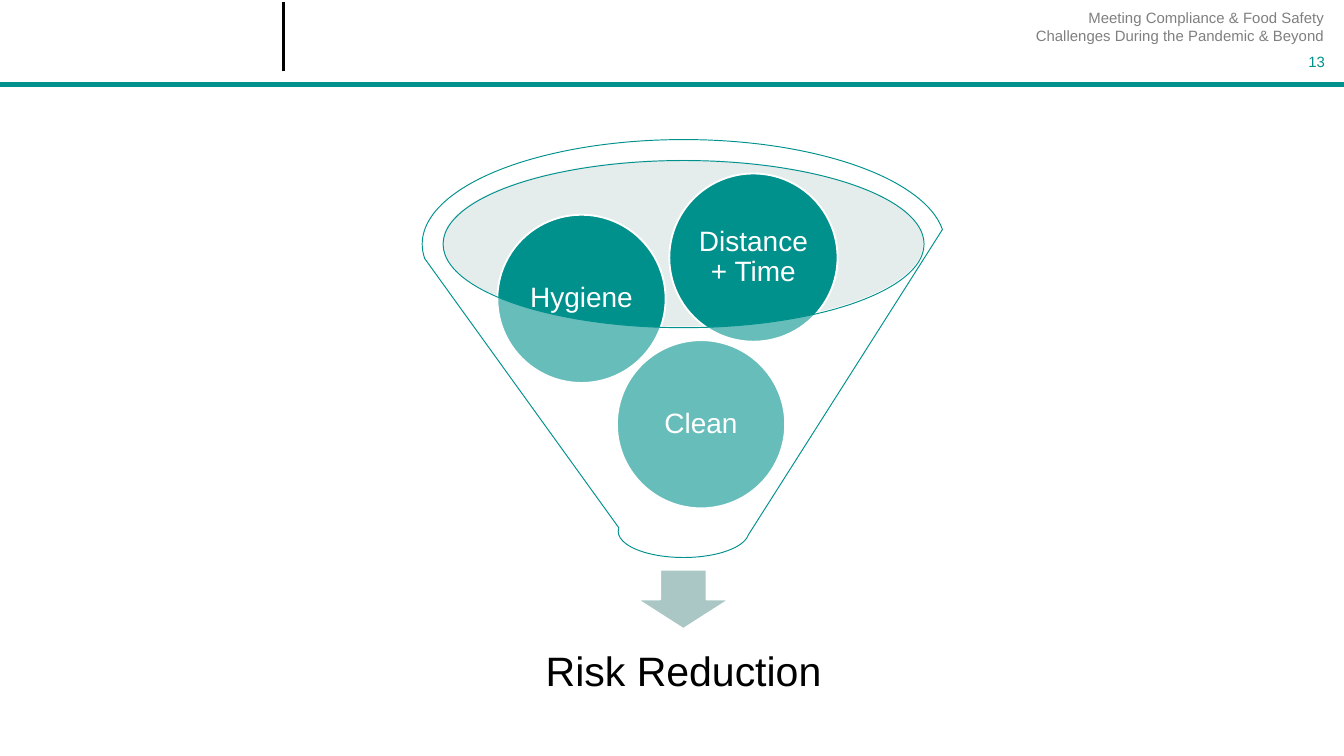
"""Build the risk reduction funnel slide."""
from lxml.etree import SubElement
from pptx import Presentation
from pptx.dml.color import RGBColor
from pptx.enum.shapes import MSO_CONNECTOR, MSO_SHAPE
from pptx.enum.text import MSO_ANCHOR, PP_ALIGN
from pptx.oxml.ns import qn
from pptx.util import Cm, Pt

COLORS = {
    "teal": "00918D",
    "mist": "BDD2D0",
    "arrow": "ABC7C5",
    "gray": "7F7F7F",
    "white": "FFFFFF",
    "black": "000000",
}


def add_text(sp, text, size, color, align=PP_ALIGN.CENTER, inset=0.05, spacing=0.9):
    tf = sp.text_frame
    tf.word_wrap = True
    tf.vertical_anchor = MSO_ANCHOR.MIDDLE
    tf.margin_left = tf.margin_right = Cm(inset)
    tf.margin_top = tf.margin_bottom = Cm(min(inset, 0.13))
    p = tf.paragraphs[0]
    p.alignment = align
    p.line_spacing = spacing
    r = p.add_run()
    r.text = text
    r.font.name = "Arial"
    r.font.size = Pt(size)
    r.font.color.rgb = RGBColor.from_string(COLORS[color])


def add_shape(kind, box, fill, line=None, width=1, alpha=None):
    sp = s.shapes.add_shape(kind, *map(Cm, box))
    sp.shadow.inherit = False
    sp.fill.solid()
    sp.fill.fore_color.rgb = RGBColor.from_string(COLORS[fill])
    if alpha:
        color = sp.fill._xPr.find(qn("a:solidFill"))[0]
        SubElement(color, qn("a:alpha"), val=str(alpha * 1000))
    if line:
        sp.line.color.rgb = RGBColor.from_string(COLORS[line])
        sp.line.width = Pt(width)
    else:
        sp.line.fill.background()
    return sp


prs = Presentation()
prs.slide_width, prs.slide_height = Cm(25.4), Cm(14.29)
s = prs.slides.add_slide(prs.slide_layouts[6])

for ends, color, width in [
    ((0, 1.6, 25.4, 1.6), "teal", 3),
    ((5.36, 1.35, 5.36, 0.03), "black", 2),
]:
    rule = s.shapes.add_connector(MSO_CONNECTOR.STRAIGHT, *map(Cm, ends))
    rule.line.color.rgb = RGBColor.from_string(COLORS[color])
    rule.line.width = Pt(width)
    SubElement(rule._element.spPr, qn("a:effectLst"))

add_shape(MSO_SHAPE.OVAL, (8.36, 3.02, 9.09, 3.15), "mist", alpha=40)
add_shape(MSO_SHAPE.DOWN_ARROW, (12.04, 10.77, 1.75, 1.12), "arrow", "white")

for left, top, label in [
    (11.66, 6.43, "Clean"),
    (9.4, 4.06, "Hygiene"),
    (12.65, 3.28, "Distance + Time"),
]:
    ball = add_shape(MSO_SHAPE.OVAL, (left, top, 3.18, 3.18), "teal", "white")
    add_text(ball, label, 15, "white")

add_shape(MSO_SHAPE.FUNNEL, (7.98, 2.64, 9.88, 7.9), "white", "teal", 0.5, 40)

header = "Meeting Compliance & Food Safety Challenges During the Pandemic & Beyond"
right = {"align": PP_ALIGN.RIGHT, "inset": 0.25, "spacing": 1}
for box, text, size, color, style in [
    ((8.69, 11.68, 8.46, 2.11), "Risk Reduction", 22, "black", {"inset": 0.43}),
    ((19.13, 0.13, 6.15, 0.76), header, 8, "gray", right),
    ((19.02, 0.94, 6.27, 0.46), "13", 8, "teal", right),
]:
    add_text(s.shapes.add_textbox(*map(Cm, box)), text, size, color, **style)

prs.save("out.pptx")
